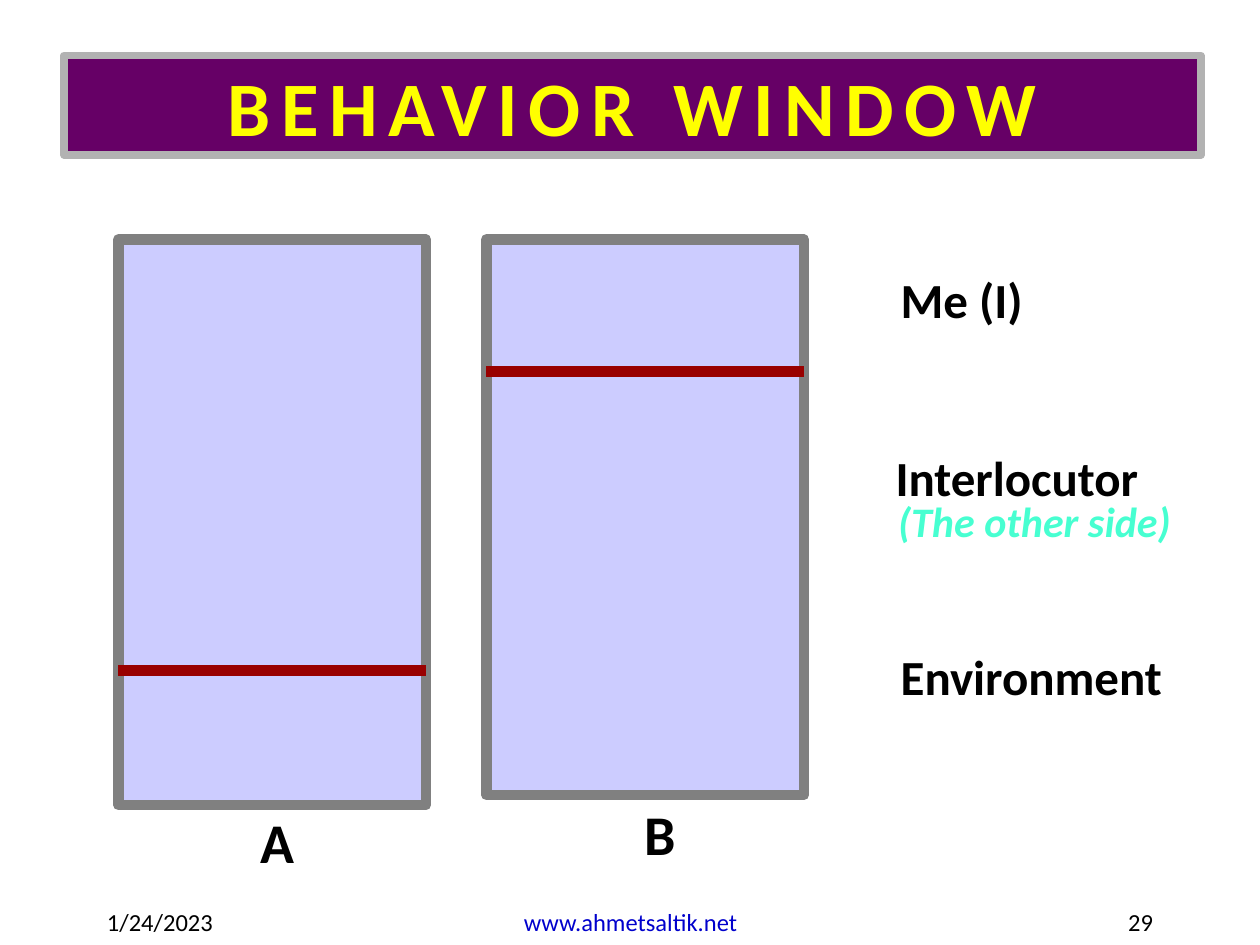
from dataclasses import dataclass

from lxml import etree
from pptx import Presentation
from pptx.dml.color import RGBColor
from pptx.enum.shapes import MSO_CONNECTOR, MSO_SHAPE
from pptx.enum.text import MSO_ANCHOR, MSO_AUTO_SIZE, PP_ALIGN
from pptx.oxml.ns import qn
from pptx.util import Inches, Pt

RECTANGLE = MSO_SHAPE.RECTANGLE
STRAIGHT = MSO_CONNECTOR.STRAIGHT
MIDDLE = MSO_ANCHOR.MIDDLE
FIT_SHAPE = MSO_AUTO_SIZE.SHAPE_TO_FIT_TEXT
LEFT, CENTER, RIGHT = PP_ALIGN.LEFT, PP_ALIGN.CENTER, PP_ALIGN.RIGHT


@dataclass(frozen=True)
class Theme:
    font: str = "Calibri"
    ink: str = "000000"
    title_ink: str = "FFFF00"
    title_fill: str = "660066"
    title_border: str = "B2B2B2"
    window_fill: str = "CCCCFF"
    window_border: str = "808080"
    divider: str = "990000"
    aside: str = "47FFD1"
    link: str = "0000CC"
    title_size: int = 44
    letter_size: int = 32
    label_size: int = 28
    aside_size: int = 24
    footer_size: int = 14
    title_line: float = 4.5
    window_line: float = 6
    title_spacing: int = 600


THEME = Theme()
SLIDE_SIZE = (10, 7.5)

TITLE = ("BEHAVIOR WINDOW", (0.51, 0.44, 9.02, 0.79))
# window box, height of its divider, letter, letter box
WINDOWS = [
    ((3.86, 1.9, 2.52, 4.41), 2.95, "B", (5.02, 6.3, 0.45, 0.64)),
    ((0.94, 1.9, 2.44, 4.49), 5.32, "A", (1.97, 6.36, 0.47, 0.64)),
]
# label, aside below it, box, hanging indent
LABELS = [
    ("Me (I)", None, (7.05, 2.18, 1.89, 0.67), 0.38),
    ("Interlocutor", "(The other side)", (7.01, 3.59, 2.44, 0.85), 0.02),
    ("Environment", None, (7.05, 5.17, 2.6, 0.51), 0.38),
]
FOOTER_TOP, FOOTER_HEIGHT = 7.15, 0.41
# text, left, width, alignment, colour
FOOTERS = [
    ("1/24/2023", 0.75, 2.08, LEFT, THEME.ink),
    ("www.ahmetsaltik.net", 3.42, 3.17, CENTER, THEME.link),
    ("29", 7.17, 2.08, RIGHT, THEME.ink),
]


def rgb(value):
    return RGBColor.from_string(value)


def style_font(font, size, color, bold=False):
    font.name = THEME.font
    font.size = Pt(size)
    font.bold = bold
    font.color.rgb = rgb(color)


def add_panel(page, place, fill, border, weight):
    panel = page.shapes.add_shape(RECTANGLE, *map(Inches, place))
    panel.shadow.inherit = False
    panel.fill.solid()
    panel.fill.fore_color.rgb = rgb(fill)
    panel.line.color.rgb = rgb(border)
    panel.line.width = Pt(weight)
    return panel


def add_text(page, place, text, size, color, bold=False, align=LEFT, wrap=True):
    box = page.shapes.add_textbox(*map(Inches, place))
    box.text_frame.word_wrap = wrap
    para = box.text_frame.paragraphs[0]
    para.alignment = align
    para.add_run().text = text
    style_font(para.font, size, color, bold)
    return box


def add_title(page):
    text, place = TITLE
    panel = add_panel(page, place, THEME.title_fill, THEME.title_border, THEME.title_line)
    panel.text_frame.vertical_anchor = MIDDLE
    para = panel.text_frame.paragraphs[0]
    para.alignment = CENTER
    span = para.add_run()
    span.text = text
    style_font(span.font, THEME.title_size, THEME.title_ink, bold=True)
    span.font._element.set("spc", str(THEME.title_spacing))


def add_window(page, place, divider_y, letter, letter_place):
    add_panel(page, place, THEME.window_fill, THEME.window_border, THEME.window_line)
    left, _, width, _ = place
    ends = (left, divider_y, left + width, divider_y)
    divider = page.shapes.add_connector(STRAIGHT, *map(Inches, ends))
    divider.line.color.rgb = rgb(THEME.divider)
    divider.line.width = Pt(THEME.window_line)
    etree.SubElement(divider._element.spPr, qn("a:effectLst"))
    box = add_text(page, letter_place, letter, THEME.letter_size, THEME.ink,
                   bold=True, wrap=False)
    box.text_frame.auto_size = FIT_SHAPE


def add_label(page, text, aside, place, indent):
    box = add_text(page, place, text, THEME.label_size, THEME.ink, bold=True)
    para = box.text_frame.paragraphs[0]
    para.line_spacing = 0.8
    para.space_before = Pt(THEME.label_size * 0.2)
    properties = para._p.get_or_add_pPr()
    properties.set("marL", str(Inches(indent)))
    properties.set("indent", str(-Inches(indent)))
    if aside:
        para.add_line_break()
        span = para.add_run()
        span.text = aside
        style_font(span.font, THEME.aside_size, THEME.aside, bold=True)
        span.font.italic = True


def main():
    deck = Presentation()
    deck.slide_width, deck.slide_height = map(Inches, SLIDE_SIZE)
    page = deck.slides.add_slide(deck.slide_layouts[6])
    add_title(page)
    for window in WINDOWS:
        add_window(page, *window)
    for label in LABELS:
        add_label(page, *label)
    for text, left, width, align, color in FOOTERS:
        add_text(page, (left, FOOTER_TOP, width, FOOTER_HEIGHT), text,
                 THEME.footer_size, color, align=align)
    deck.save("out.pptx")


if __name__ == "__main__":
    main()
